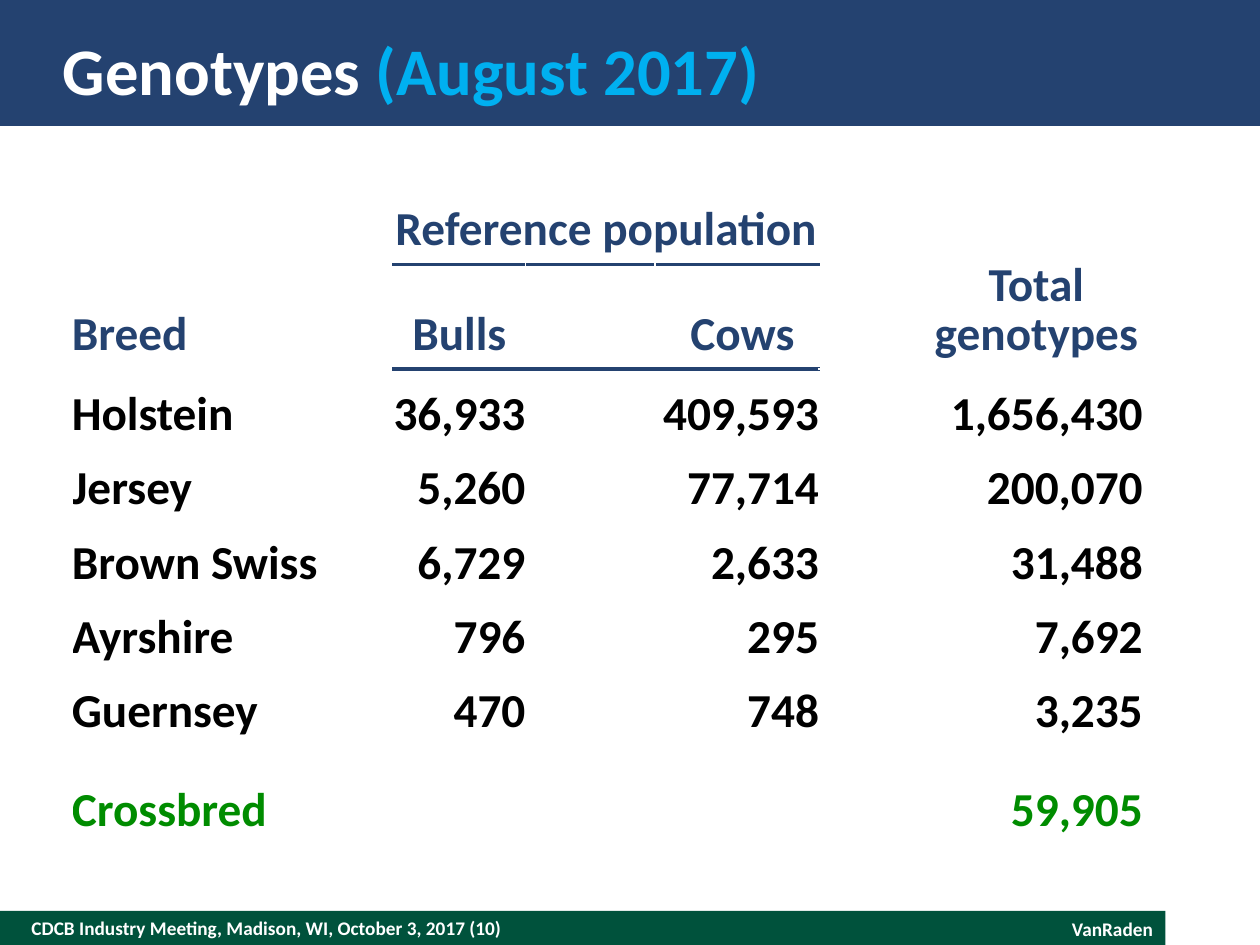
import pptx
import pptx.util
import pptx.dml.color
import pptx.enum.shapes
import pptx.enum.text
import pptx.oxml
import pptx.oxml.ns
from dataclasses import dataclass

Inches = pptx.util.Inches
Pt = pptx.util.Pt
Align = pptx.enum.text.PP_ALIGN
Anchor = pptx.enum.text.MSO_ANCHOR


@dataclass(frozen=True)
class Theme:
    font: str = "Calibri"
    navy: str = "244270"
    forest: str = "00523C"
    white: str = "FFFFFF"
    sky: str = "00B0F0"
    black: str = "000000"
    green: str = "008C00"
    title_size: int = 38
    table_size: int = 27
    footer_size: int = 11
    rule_width: float = 2.25


class SlideBuilder:
    def __init__(self, slide, theme):
        self.s = slide
        self.theme = theme

    def run(self, p, text, size, color):
        r = p.add_run()
        r.text = text
        formats = {"name": self.theme.font, "size": Pt(size), "bold": True}
        for name, value in formats.items():
            setattr(r.font, name, value)
        r.font.color.rgb = pptx.dml.color.RGBColor.from_string(color)

    def band(self, left, top, width, height, color):
        sp = self.s.shapes.add_shape(
            pptx.enum.shapes.MSO_SHAPE.RECTANGLE,
            Inches(left), Inches(top), Inches(width), Inches(height))
        sp.shadow.inherit = False
        sp.fill.solid()
        sp.fill.fore_color.rgb = pptx.dml.color.RGBColor.from_string(color)
        sp.line.fill.background()

    def text(self, box, runs, size, align=Align.LEFT, anchor=Anchor.MIDDLE,
             margins=(0, 0)):
        sp = self.s.shapes.add_textbox(*map(Inches, box))
        tf = sp.text_frame
        side, end = map(Inches, margins)
        formats = {"word_wrap": True, "vertical_anchor": anchor,
                   "margin_left": side, "margin_right": side,
                   "margin_top": end, "margin_bottom": end}
        for name, value in formats.items():
            setattr(tf, name, value)
        p = tf.paragraphs[0]
        p.alignment = align
        for text, color in runs:
            self.run(p, text, size, color)

    def table(self, left, top, widths, heights):
        frame = self.s.shapes.add_table(
            len(heights), len(widths), Inches(left), Inches(top),
            Inches(sum(widths)), Inches(sum(heights)))
        table = frame.table
        table.first_row = False
        table.horz_banding = False
        for column, width in zip(table.columns, widths):
            column.width = Inches(width)
        for row, height in zip(table.rows, heights):
            row.height = Inches(height)
        for cell in table.iter_cells():
            cell.fill.background()
        return table

    def cell(self, cell, lines, color, align, spacing, top=0, bottom=0):
        formats = {"vertical_anchor": Anchor.BOTTOM,
                   "margin_left": 0, "margin_right": 0,
                   "margin_top": Inches(top), "margin_bottom": Inches(bottom)}
        for name, value in formats.items():
            setattr(cell, name, value)
        tf = cell.text_frame
        for i, line in enumerate(lines):
            p = tf.add_paragraph() if i else tf.paragraphs[0]
            p.alignment = align
            p.line_spacing = Pt(spacing)
            self.run(p, line, self.theme.table_size, color)

    def border(self, cell, side):
        ln = pptx.oxml.parse_xml(
            f'<a:{side} {pptx.oxml.ns.nsdecls("a")} '
            f'w="{Pt(self.theme.rule_width)}"><a:solidFill>'
            f'<a:srgbClr val="{self.theme.navy}"/></a:solidFill></a:{side}>')
        cell._tc.get_or_add_tcPr().insert(0, ln)


HEADERS = [
    (0, 0, ["Breed"], Align.LEFT, 0),
    (0, 1, ["Reference population"], Align.CENTER, 0),
    (0, 5, ["Total", "genotypes"], Align.CENTER, 0),
    (1, 1, ["Bulls"], Align.CENTER, 0.05),
    (1, 3, [" Cows"], Align.CENTER, 0.05),
]
BREEDS = [
    ("Holstein", "36,933", "409,593", "1,656,430"),
    ("Jersey", "5,260", "77,714", "200,070"),
    ("Brown Swiss", "6,729", "2,633", "31,488"),
    ("Ayrshire", "796", "295", "7,692"),
    ("Guernsey", "470", "748", "3,235"),
    ("Crossbred", "", "", "59,905"),
]
VALUE_COLUMNS = (0, 1, 3, 5)


def main():
    prs = pptx.Presentation()
    prs.slide_width, prs.slide_height = Inches(10), Inches(7.5)
    theme = Theme()
    b = SlideBuilder(prs.slides.add_slide(prs.slide_layouts[6]), theme)

    b.band(0, 7.23, 9.25, 0.27, theme.forest)
    b.band(0, 0, 10, 1, theme.navy)
    b.text((0.25, 7.23, 7, 0.27),
           [("CDCB Industry Meeting, Madison, WI, October 3, 2017 (10)", theme.white)],
           theme.footer_size)
    b.text((7.25, 7.23, 2, 0.29), [("VanRaden", theme.white)],
           theme.footer_size, Align.RIGHT, Anchor.TOP, (0.1, 0.05))
    b.text((0.5, 0.2, 9, 0.7),
           [("Genotypes ", theme.white), ("(August 2017)", theme.sky)],
           theme.title_size)

    table = b.table(0.57, 1.53, [2.55, 1.05, 1.03, 1.3, 0.88, 1.69],
                    [0.57, 0.62] + [0.59] * 5 + [0.78])
    for column in (0, 4, 5):
        table.cell(0, column).merge(table.cell(1, column))
    table.cell(0, 1).merge(table.cell(0, 3))
    for column in (1, 2, 3):
        b.border(table.cell(0, column), "lnB")
        b.border(table.cell(1, column), "lnT")

    for row, column, lines, align, top in HEADERS:
        b.cell(table.cell(row, column), lines, theme.navy, align, 28, top, 0.05)
    for row, values in enumerate(BREEDS, start=2):
        crossbred = values[0] == "Crossbred"
        color, spacing = (theme.green, 42) if crossbred else (theme.black, 32)
        for column, value in zip(VALUE_COLUMNS, values):
            if value:
                align = Align.RIGHT if column else Align.LEFT
                b.cell(table.cell(row, column), [value], color, align, spacing)

    prs.save("out.pptx")


if __name__ == "__main__":
    main()
